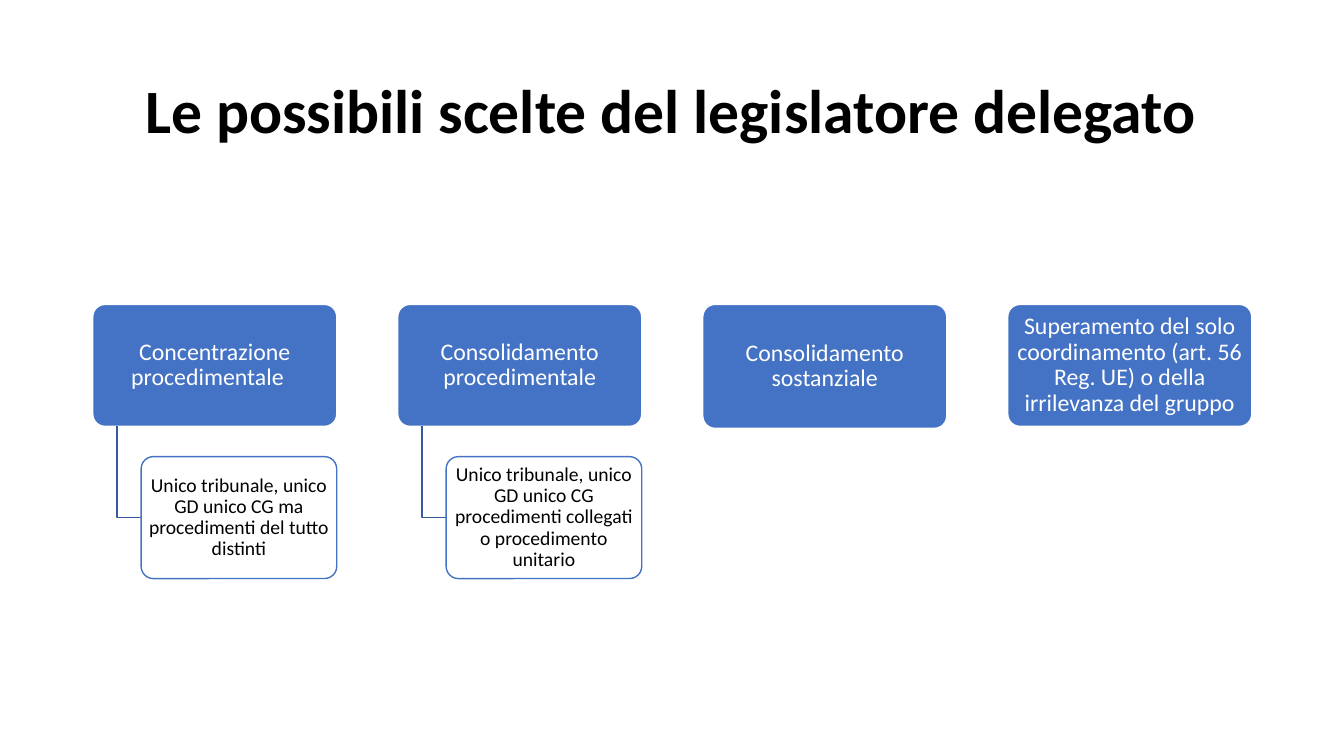
from dataclasses import dataclass

from pptx import Presentation
from pptx.dml.color import RGBColor
from pptx.enum.shapes import MSO_SHAPE
from pptx.enum.text import MSO_ANCHOR, PP_ALIGN
from pptx.util import Inches, Pt

ROUNDED = MSO_SHAPE.ROUNDED_RECTANGLE
MIDDLE = MSO_ANCHOR.MIDDLE
CENTER = PP_ALIGN.CENTER


@dataclass(frozen=True)
class Theme:
    font: str = "Calibri"
    blue: str = "4472C4"
    dark_blue: str = "365B9D"
    white: str = "FFFFFF"
    black: str = "000000"
    title_size: int = 44
    choice_size: int = 17
    detail_size: int = 14


T = Theme()

# Column geometry in inches
LEFT, TOP, PITCH = 0.92, 3.02, 3.025
CHOICE_W, BOX_H = 2.42, 1.21
DETAIL_W, DETAIL_TOP = 1.94, 4.53
STEM_DX, DETAIL_DX = 0.24, 0.48
TAB_WIDTH = 0.83

# Choice, its detail, height of the choice box
CHOICES = [
    ("Concentrazione procedimentale\t",
     "Unico tribunale, unico GD unico CG ma procedimenti del tutto distinti", BOX_H),
    ("Consolidamento procedimentale",
     "Unico tribunale, unico GD unico CG procedimenti collegati o procedimento unitario", BOX_H),
    ("Consolidamento sostanziale", None, 1.23),
    ("Superamento del solo coordinamento (art. 56 Reg. UE) o della irrilevanza del gruppo",
     None, BOX_H),
]


def rgb(color):
    return RGBColor.from_string(color)


def write(tf, text, size, color, bold=False):
    tf.word_wrap = True
    tf.vertical_anchor = MIDDLE
    p = tf.paragraphs[0]
    p.alignment = CENTER
    p.line_spacing = 0.9
    p._p.get_or_add_pPr().set("defTabSz", str(Inches(TAB_WIDTH)))
    r = p.add_run()
    r.text = text
    r.font.name = T.font
    r.font.size = Pt(size)
    r.font.bold = bold
    r.font.color.rgb = rgb(color)


def add_title(s, text):
    title = s.shapes.title
    title.left, title.top = Inches(0.91), Inches(0.4)
    title.width, title.height = Inches(11.5), Inches(1.45)
    write(title.text_frame, text, T.title_size, T.black, bold=True)


def add_box(s, x, y, w, h, text, *, fill, line, size, color, inset):
    box = s.shapes.add_shape(ROUNDED, Inches(x), Inches(y), Inches(w), Inches(h))
    box.adjustments[0] = 0.1
    box.shadow.inherit = False
    box.fill.solid()
    box.fill.fore_color.rgb = rgb(fill)
    box.line.color.rgb = rgb(line)
    box.line.width = Pt(1)
    tf = box.text_frame
    tf.margin_left = tf.margin_right = Inches(inset)
    tf.margin_top = tf.margin_bottom = Inches(0.02)
    write(tf, text, size, color)


def add_elbow(s, x, y, to_x, to_y):
    builder = s.shapes.build_freeform(Inches(x), Inches(y))
    builder.add_line_segments(
        [(Inches(x), Inches(to_y)), (Inches(to_x), Inches(to_y))], close=False)
    elbow = builder.convert_to_shape()
    elbow.shadow.inherit = False
    elbow.fill.background()
    elbow.line.color.rgb = rgb(T.dark_blue)
    elbow.line.width = Pt(1)


def add_choice(s, x, choice, detail, height):
    add_box(s, x, TOP, CHOICE_W, height, choice, fill=T.blue, line=T.white,
            size=T.choice_size, color=T.white, inset=0.04)
    if detail:
        add_elbow(s, x + STEM_DX, TOP + height, x + DETAIL_DX, DETAIL_TOP + BOX_H / 2)
        add_box(s, x + DETAIL_DX, DETAIL_TOP, DETAIL_W, BOX_H, detail, fill=T.white,
                line=T.blue, size=T.detail_size, color=T.black, inset=0.03)


def main():
    prs = Presentation()
    prs.slide_width, prs.slide_height = Inches(13.33), Inches(7.5)
    s = prs.slides.add_slide(prs.slide_layouts[5])

    add_title(s, "Le possibili scelte del legislatore delegato")

    # One column per choice
    for i, (choice, detail, height) in enumerate(CHOICES):
        add_choice(s, LEFT + i * PITCH, choice, detail, height)

    prs.save("out.pptx")


if __name__ == "__main__":
    main()
